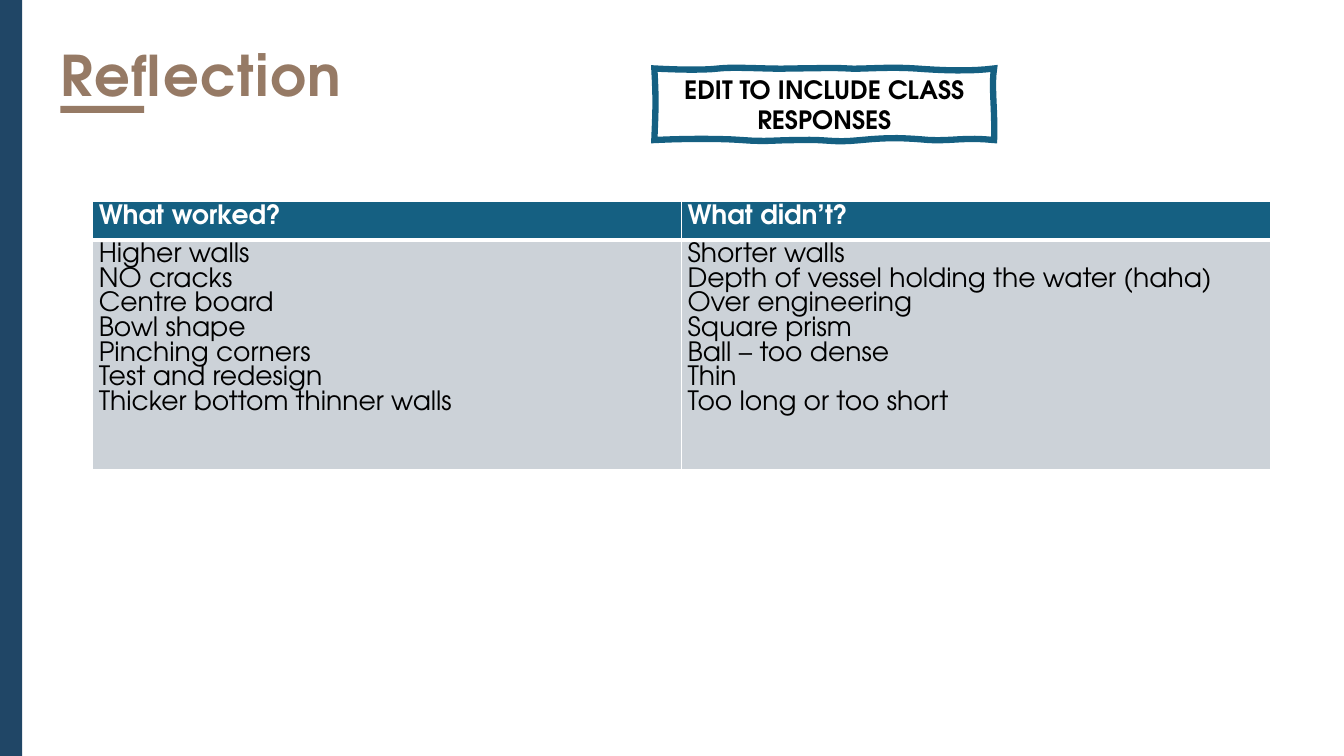
from dataclasses import dataclass

from lxml import etree
from pptx import Presentation
from pptx.dml.color import RGBColor
from pptx.enum.shapes import MSO_SHAPE
from pptx.enum.text import MSO_ANCHOR, MSO_AUTO_SIZE, PP_ALIGN
from pptx.oxml.ns import qn
from pptx.util import Inches, Pt

RECTANGLE = MSO_SHAPE.RECTANGLE
TOP, MIDDLE = MSO_ANCHOR.TOP, MSO_ANCHOR.MIDDLE
NO_AUTOFIT = MSO_AUTO_SIZE.NONE
LEFT, CENTER = PP_ALIGN.LEFT, PP_ALIGN.CENTER
TITLE_ONLY_LAYOUT = 5


@dataclass(frozen=True)
class Theme:
    font: str = "TeX Gyre Adventor"
    navy: str = "204666"
    brown: str = "967A65"
    teal: str = "156082"
    gray: str = "CCD2D8"
    white: str = "FFFFFF"
    black: str = "000000"
    title_size: float = 40
    table_size: float = 19
    callout_size: float = 18


@dataclass(frozen=True)
class Bar:
    left: float
    top: float
    width: float
    height: float
    color: str


@dataclass(frozen=True)
class TableColumn:
    heading: str
    responses: tuple[str, ...]


THEME = Theme()

BARS = (
    Bar(-0.27, -0.39, 0.49, 8.28, THEME.navy),
    Bar(0.6, 1.05, 0.83, 0.07, THEME.brown),
)

COLUMNS = (
    TableColumn("What worked?", (
        "Higher walls", "NO cracks", "Centre board", "Bowl shape",
        "Pinching corners", "Test and redesign", "Thicker bottom thinner walls")),
    TableColumn("What didn’t?", (
        "Shorter walls", "Depth of vessel holding the water (haha)",
        "Over engineering", "Square prism", "Ball – too dense", "Thin",
        "Too long or too short")),
)

CALLOUT_START = (6.49, 0.68)
# Each curve: first control point, second control point, end point.
CALLOUT_CURVES = (
    ((6.67, 0.69), (6.97, 0.7), (7.13, 0.68)),
    ((7.28, 0.66), (7.67, 0.69), (7.83, 0.68)),
    ((8, 0.68), (8.29, 0.67), (8.41, 0.68)),
    ((8.53, 0.69), (8.81, 0.66), (9.08, 0.68)),
    ((9.35, 0.7), (9.63, 0.71), (9.86, 0.68)),
    ((9.83, 0.86), (9.87, 1.05), (9.86, 1.39)),
    ((9.57, 1.36), (9.45, 1.4), (9.22, 1.39)),
    ((8.98, 1.37), (8.84, 1.36), (8.54, 1.39)),
    ((8.24, 1.42), (8.22, 1.38), (7.93, 1.39)),
    ((7.65, 1.39), (7.63, 1.41), (7.36, 1.39)),
    ((7.1, 1.37), (6.67, 1.38), (6.49, 1.39)),
    ((6.5, 1.15), (6.51, 1.01), (6.49, 0.68)),
)
CURVE_STEPS = 8


def rgb(color: str) -> RGBColor:
    return RGBColor.from_string(color)


def format_text(text_frame, size: float, color: str, bold: bool) -> None:
    for paragraph in text_frame.paragraphs:
        for run in paragraph.runs:
            run.font.name = THEME.font
            run.font.size = Pt(size)
            run.font.bold = bold
            run.font.color.rgb = rgb(color)


def add_bar(slide, bar: Bar) -> None:
    shape = slide.shapes.add_shape(
        RECTANGLE, Inches(bar.left), Inches(bar.top),
        Inches(bar.width), Inches(bar.height))
    shape.shadow.inherit = False
    shape.fill.solid()
    shape.fill.fore_color.rgb = rgb(bar.color)
    shape.line.fill.background()


def add_title(slide) -> None:
    title = slide.shapes.title
    title.left, title.top = Inches(0.6), Inches(0.27)
    title.width, title.height = Inches(9.1), Inches(0.78)
    frame = title.text_frame
    frame.text = "Reflection"
    frame.auto_size = NO_AUTOFIT
    frame.vertical_anchor = TOP
    frame.margin_left = frame.margin_right = 0
    frame.margin_top = frame.margin_bottom = 0
    paragraph = frame.paragraphs[0]
    paragraph.alignment = LEFT
    paragraph.line_spacing = Pt(57.6)
    format_text(frame, THEME.title_size, THEME.brown, True)
    paragraph.runs[0].font._element.set("spc", "100")


def set_borders(cell, widths: dict[str, float]) -> None:
    properties = cell._tc.get_or_add_tcPr()
    for side, width in widths.items():
        line = etree.SubElement(properties, qn(f"a:ln{side}"), w=str(Pt(width)))
        fill = etree.SubElement(line, qn("a:solidFill"))
        etree.SubElement(fill, qn("a:srgbClr"), val=THEME.white)


def fill_cell(cell, text: str, is_heading: bool) -> None:
    cell.text_frame.text = text
    cell.margin_left = cell.margin_right = Inches(0.06)
    cell.margin_top = cell.margin_bottom = Inches(0.03)
    color = THEME.white if is_heading else THEME.black
    format_text(cell.text_frame, THEME.table_size, color, is_heading)
    set_borders(cell, {"L": 1, "R": 1, "T": 1 if is_heading else 3,
                       "B": 3 if is_heading else 1})
    cell.fill.solid()
    cell.fill.fore_color.rgb = rgb(THEME.teal if is_heading else THEME.gray)


def add_response_table(slide) -> None:
    table = slide.shapes.add_table(
        2, len(COLUMNS), Inches(0.92), Inches(2), Inches(11.68), Inches(2.66)).table
    table.horz_banding = False
    table.rows[0].height = Inches(0.38)
    table.rows[1].height = Inches(2.28)
    for index, column in enumerate(COLUMNS):
        fill_cell(table.cell(0, index), column.heading, True)
        fill_cell(table.cell(1, index), "\n".join(column.responses), False)


def callout_points() -> list[tuple[float, float]]:
    """Sample the wavy outline, in inches, along its cubic curves."""
    points = []
    start = CALLOUT_START
    for first, second, end in CALLOUT_CURVES:
        for step in range(1, CURVE_STEPS + 1):
            t = step / CURVE_STEPS
            u = 1 - t
            points.append(tuple(
                u**3 * a + 3 * u * u * t * b + 3 * u * t * t * c + t**3 * d
                for a, b, c, d in zip(start, first, second, end)))
        start = end
    return points


def add_callout(slide) -> None:
    start_x, start_y = CALLOUT_START
    builder = slide.shapes.build_freeform(Inches(start_x), Inches(start_y))
    builder.add_line_segments(
        [(Inches(x), Inches(y)) for x, y in callout_points()], close=True)
    callout = builder.convert_to_shape()
    callout.shadow.inherit = False
    callout.fill.background()
    callout.line.color.rgb = rgb(THEME.teal)
    callout.line.width = Pt(4.5)
    etree.SubElement(callout.line._get_or_add_ln(), qn("a:miter"), lim="800000")
    frame = callout.text_frame
    frame.text = "EDIT TO INCLUDE CLASS RESPONSES"
    frame.word_wrap = True
    frame.vertical_anchor = MIDDLE
    frame.paragraphs[0].alignment = CENTER
    format_text(frame, THEME.callout_size, THEME.black, True)


def main() -> None:
    presentation = Presentation()
    presentation.slide_width = Inches(13.33)
    presentation.slide_height = Inches(7.5)
    slide = presentation.slides.add_slide(
        presentation.slide_layouts[TITLE_ONLY_LAYOUT])
    add_title(slide)
    for bar in BARS:
        add_bar(slide, bar)
    add_response_table(slide)
    add_callout(slide)
    presentation.save("out.pptx")


if __name__ == "__main__":
    main()
